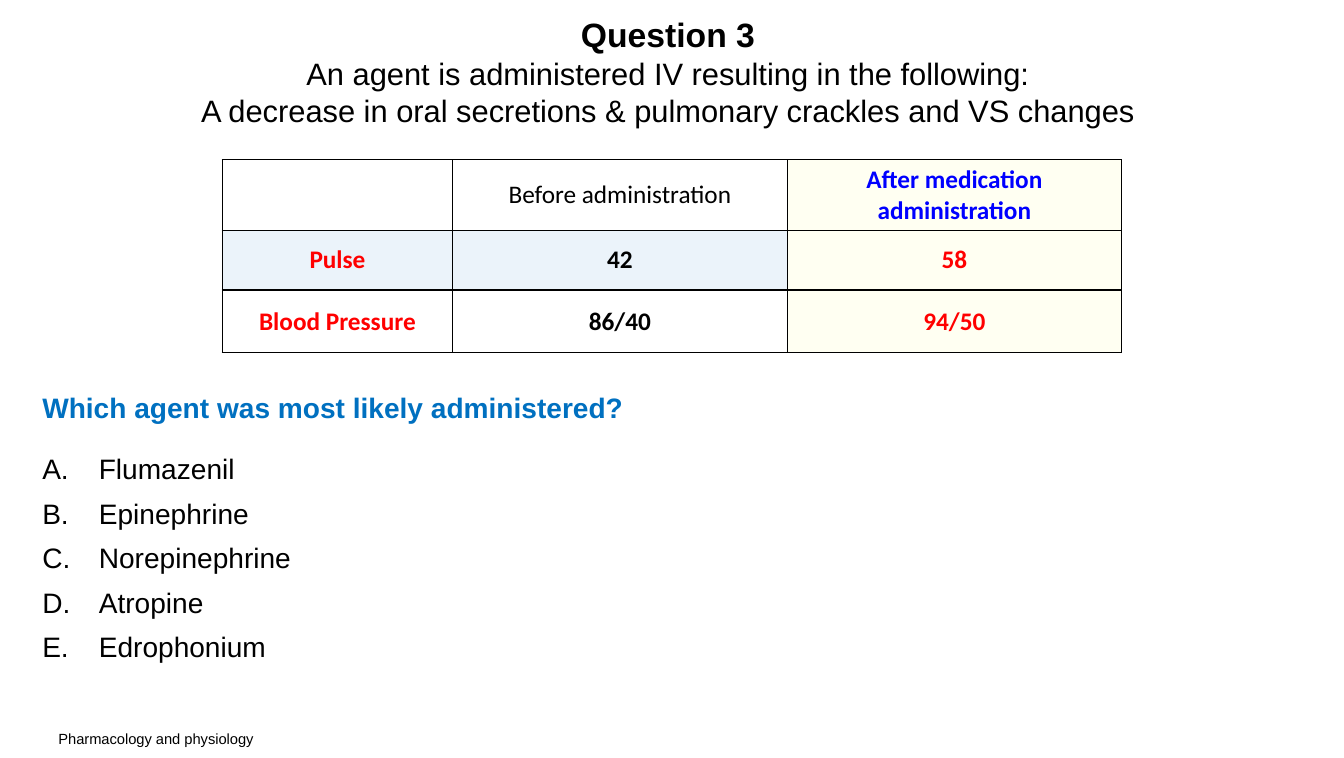
"""Build a pharmacology quiz slide with a vital-signs table and lettered answers."""
from dataclasses import dataclass
from lxml import etree
from pptx import Presentation
from pptx.dml.color import RGBColor
from pptx.enum.text import MSO_ANCHOR, PP_ALIGN
from pptx.oxml.ns import qn
from pptx.util import Inches, Pt

CENTER = PP_ALIGN.CENTER
MIDDLE, TOP = MSO_ANCHOR.MIDDLE, MSO_ANCHOR.TOP


@dataclass(frozen=True)
class Theme:
    """Fonts, colours and type sizes."""
    font: str = "Arial"
    table_font: str = "Calibri"
    black: str = "000000"
    red: str = "FF0000"
    blue: str = "0000FF"
    question: str = "0070C0"
    after_fill: str = "FFFFF2"
    pulse_fill: str = "EBF3FA"
    heading: float = 24
    stem: float = 22
    body: float = 20
    cell: float = 18
    footer: float = 10.5


T = Theme()

SLIDE_SIZE = (13.3, 7.5)
HEADING = "Question 3"
STEM = [
    "An agent is administered IV resulting in the following:",
    "A decrease in oral secretions & pulmonary crackles and VS changes",
]
QUESTION = "Which agent was most likely administered?"
ANSWERS = ["Flumazenil", "Epinephrine", "Norepinephrine", "Atropine", "Edrophonium"]
FOOTER = "Pharmacology and physiology"

VITALS = [
    [("", T.black, False, None),
     ("Before administration", T.black, False, None),
     ("After medication administration", T.blue, True, T.after_fill)],
    [("Pulse", T.red, True, T.pulse_fill),
     ("42", T.black, True, T.pulse_fill),
     ("58", T.red, True, T.after_fill)],
    [("Blood Pressure", T.red, True, None),
     ("86/40", T.black, True, None),
     ("94/50", T.red, True, T.after_fill)],
]
COL_WIDTHS = [2.28, 3.31, 3.31]
ROW_HEIGHTS = [0.7, 0.59, 0.62]

TITLE_BOX = (0.15, 0.08, 12.92, 1.25)
TABLE_AT = (2.2, 1.58)
QUESTION_BOX = (0.32, 3.81, 5.99, 0.44)
ANSWER_BOX = (0.32, 4.46, 4.73, 2.5)
FOOTER_BOX = (0.48, 7.17, 2.17, 0.28)
ANSWER_INDENT = 0.56


def add_run(p, text, size, color=T.black, bold=False, font=T.font):
    r = p.add_run()
    r.text = text
    r.font.name = font
    r.font.size = Pt(size)
    r.font.bold = bold
    r.font.color.rgb = RGBColor.from_string(color)


def add_box(s, box, wrap=True, anchor=TOP):
    tf = s.shapes.add_textbox(*map(Inches, box)).text_frame
    tf.word_wrap = wrap
    tf.vertical_anchor = anchor
    return tf


def add_title(s):
    p = add_box(s, TITLE_BOX, anchor=MIDDLE).paragraphs[0]
    p.alignment = CENTER
    add_run(p, HEADING, T.heading, bold=True)
    for line in STEM:
        p.add_line_break()
        add_run(p, line, T.stem)


def add_answers(s):
    tf = add_box(s, ANSWER_BOX)
    for i, answer in enumerate(ANSWERS):
        p = tf.add_paragraph() if i else tf.paragraphs[0]
        p.line_spacing = 0.9
        p.space_before = Pt(10)
        pPr = p._p.get_or_add_pPr()
        pPr.set("marL", str(Inches(ANSWER_INDENT)))
        pPr.set("indent", str(-Inches(ANSWER_INDENT)))
        etree.SubElement(pPr, qn("a:buFont"), typeface=T.font)
        etree.SubElement(pPr, qn("a:buAutoNum"), type="alphaUcPeriod")
        add_run(p, answer, T.body)


def add_borders(cell):
    tcPr = cell._tc.get_or_add_tcPr()
    for i, side in enumerate(("a:lnL", "a:lnR", "a:lnT", "a:lnB")):
        ln = etree.Element(qn(side), w=str(Pt(1)))
        fill = etree.SubElement(ln, qn("a:solidFill"))
        etree.SubElement(fill, qn("a:srgbClr"), val=T.black)
        tcPr.insert(i, ln)


def fill_cell(cell, text, color, bold, fill):
    cell.vertical_anchor = MIDDLE
    if fill:
        cell.fill.solid()
        cell.fill.fore_color.rgb = RGBColor.from_string(fill)
    else:
        cell.fill.background()
    add_borders(cell)
    if text:
        p = cell.text_frame.paragraphs[0]
        p.alignment = CENTER
        add_run(p, text, T.cell, color, bold, T.table_font)


def add_vitals(s):
    size = (sum(COL_WIDTHS), sum(ROW_HEIGHTS))
    table = s.shapes.add_table(
        len(VITALS), len(COL_WIDTHS), *map(Inches, TABLE_AT + size)).table
    table.first_row = table.horz_banding = False
    for col, width in zip(table.columns, COL_WIDTHS):
        col.width = Inches(width)
    for row, height, values in zip(table.rows, ROW_HEIGHTS, VITALS):
        row.height = Inches(height)
        for cell, value in zip(row.cells, values):
            fill_cell(cell, *value)


def main():
    prs = Presentation()
    prs.slide_width, prs.slide_height = map(Inches, SLIDE_SIZE)
    s = prs.slides.add_slide(prs.slide_layouts[6])
    add_title(s)
    add_answers(s)
    add_run(add_box(s, QUESTION_BOX, wrap=False).paragraphs[0],
            QUESTION, T.body, T.question, bold=True)
    add_run(add_box(s, FOOTER_BOX, wrap=False).paragraphs[0], FOOTER, T.footer)
    add_vitals(s)
    prs.save("out.pptx")


if __name__ == "__main__":
    main()
